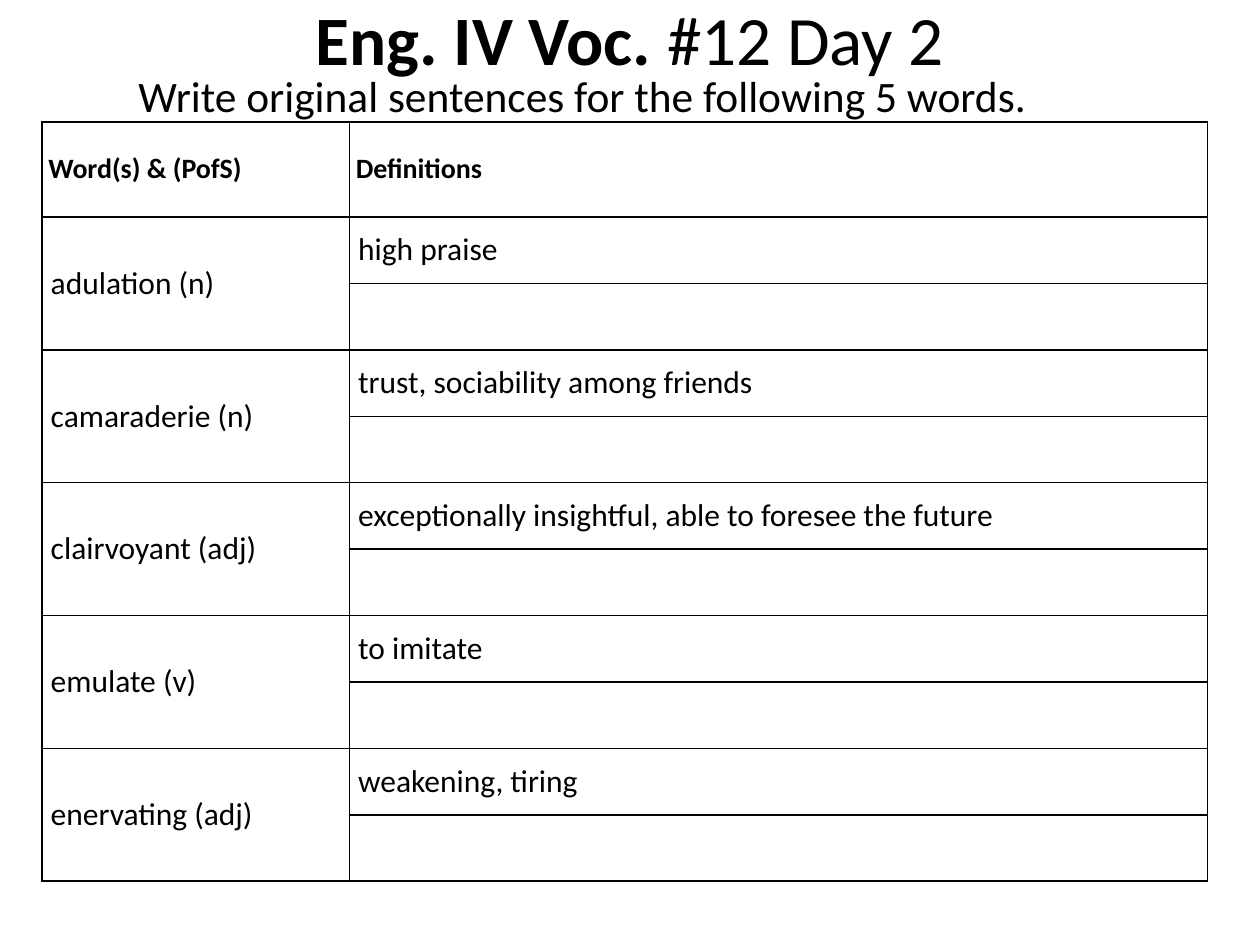
from pptx import Presentation
from pptx.dml import color
from pptx.enum import text
from pptx.oxml import parse_xml
from pptx.oxml.ns import nsdecls
from pptx.util import Pt

COLORS = {"ink": "000000", "paper": "FFFFFF"}
WORDS = [
    ("adulation (n)", "high praise"),
    ("camaraderie (n)", "trust, sociability among friends"),
    ("clairvoyant (adj)", "exceptionally insightful, able to foresee the future"),
    ("emulate (v)", "to imitate"),
    ("enervating (adj)", "weakening, tiring"),
]


def apply(target, values):
    for name, value in values.items():
        setattr(target, name, value)


class Worksheet:
    font = "Calibri"

    def __init__(self, deck):
        self.page = deck.slides.add_slide(deck.slide_layouts[6])

    def add_spans(self, para, spans, size):
        for wording, bold in spans:
            span = para.add_run()
            span.text = wording
            apply(span.font, {"name": self.font, "size": Pt(size), "bold": bold})
            span.font.color.rgb = color.RGBColor.from_string(COLORS["ink"])

    def textbox(self, bounds, spans, size, frame_format, align):
        box = self.page.shapes.add_textbox(*map(Pt, bounds))
        apply(box.text_frame, {"word_wrap": True, **frame_format})
        para = box.text_frame.paragraphs[0]
        para.alignment = align
        self.add_spans(para, spans, size)

    def cell(self, cell, wording, size=18, bold=False, margin=5):
        apply(cell, {
            "margin_left": Pt(margin), "margin_right": Pt(margin),
            "margin_top": 0, "margin_bottom": 0,
            "vertical_anchor": text.MSO_ANCHOR.MIDDLE,
        })
        if wording:
            self.add_spans(cell.text_frame.paragraphs[0], [(wording, bold)], size)

    def border(self, cell):
        properties = cell._tc.get_or_add_tcPr()
        for index, side in enumerate(("lnL", "lnR", "lnT", "lnB")):
            properties.insert(index, parse_xml(
                f'<a:{side} {nsdecls("a")} w="{Pt(1)}"><a:solidFill>'
                f'<a:srgbClr val="{COLORS["ink"]}"/></a:solidFill></a:{side}>'))

    def vocabulary(self, left, top, widths, heights, headings, words):
        table = self.page.shapes.add_table(
            len(heights), len(widths), Pt(left), Pt(top),
            Pt(sum(widths)), Pt(sum(heights))).table
        apply(table, {"first_row": False, "horz_banding": False})
        for column, width in zip(table.columns, widths):
            column.width = Pt(width)
        for row, height in zip(table.rows, heights):
            row.height = Pt(height)
        for cell in table.iter_cells():
            cell.fill.solid()
            cell.fill.fore_color.rgb = color.RGBColor.from_string(COLORS["paper"])
            self.border(cell)
        for column, heading in enumerate(headings):
            self.cell(table.cell(0, column), heading, 16, True, 3.6)
        for index, (word, definition) in enumerate(words):
            row = 1 + 2 * index
            table.cell(row, 0).merge(table.cell(row + 1, 0))
            self.cell(table.cell(row, 0), word)
            self.cell(table.cell(row, 1), definition)
            self.cell(table.cell(row + 1, 1), "")


def main():
    deck = Presentation()
    apply(deck, {"slide_width": Pt(720), "slide_height": Pt(540)})
    sheet = Worksheet(deck)
    sheet.textbox(
        (36, 0, 648, 38), [("Eng. IV Voc. ", True), ("#12 Day 2", False)], 39.6,
        {"vertical_anchor": text.MSO_ANCHOR.MIDDLE, "margin_top": Pt(5), "margin_bottom": 0},
        text.PP_ALIGN.CENTER)
    sheet.textbox(
        (72, 36, 564, 36),
        [("Write original sentences for the following 5 words.", False)], 24.8,
        {"vertical_anchor": text.MSO_ANCHOR.TOP}, text.PP_ALIGN.LEFT)
    sheet.vocabulary(
        24, 69.6, [175.7, 490.3], [54.4] + [37.97] * (2 * len(WORDS)),
        ["Word(s) & (PofS)", "Definitions"], WORDS)
    deck.save("out.pptx")


if __name__ == "__main__":
    main()
